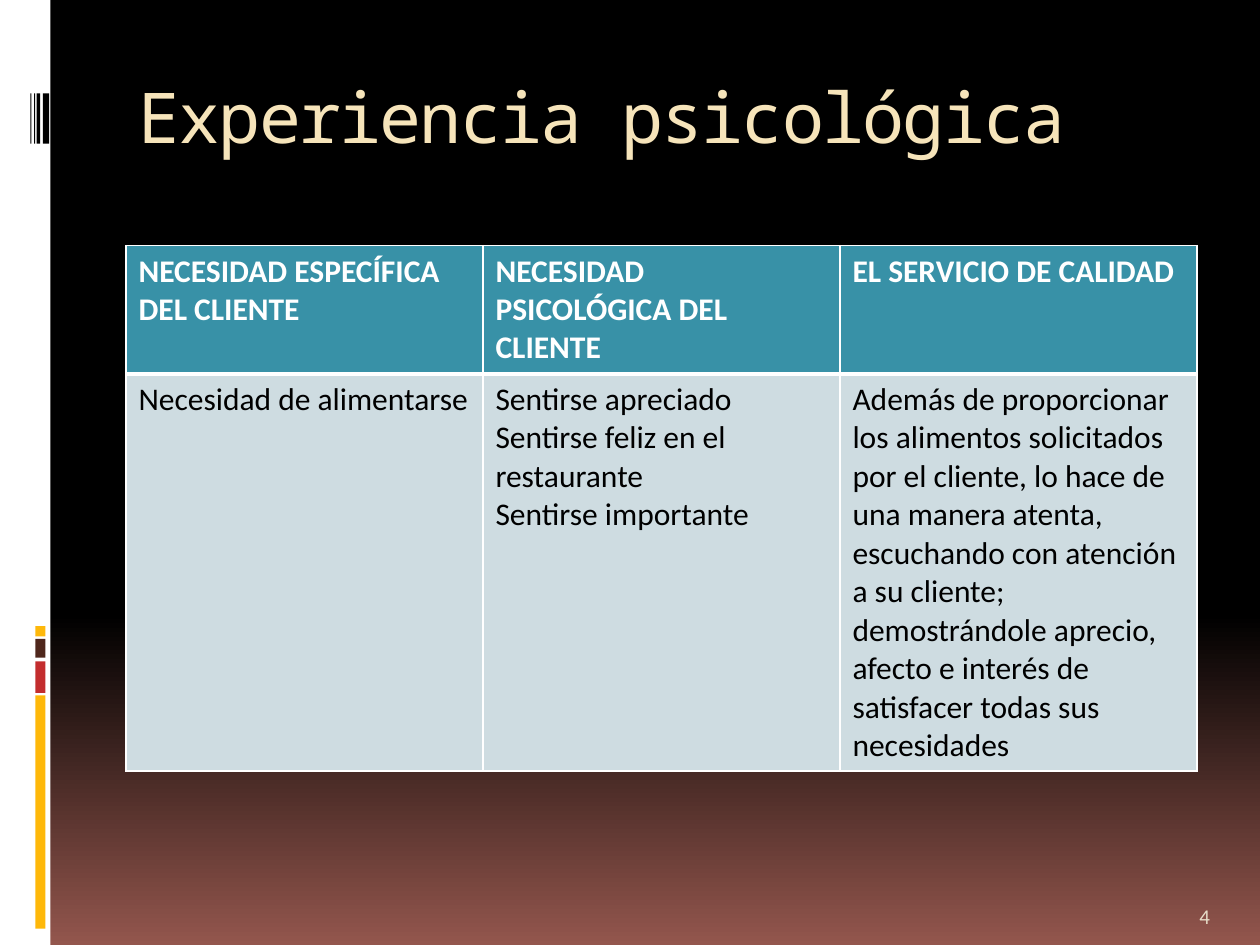
"""Builds the slide on psychological experience in customer service."""
from lxml import etree
from pptx import Presentation, util as u
from pptx.dml.color import RGBColor
from pptx.enum import shapes, text
from pptx.oxml.ns import qn

WHITE = RGBColor(0xFF, 0xFF, 0xFF)
BLACK = RGBColor(0x00, 0x00, 0x00)
ROSE = RGBColor(0x93, 0x56, 0x4D)
GOLD = RGBColor(0xFE, 0xB8, 0x0A)
RED = RGBColor(0xC3, 0x2D, 0x2E)
BROWN = RGBColor(0x4F, 0x27, 0x1C)
CREAM = RGBColor(0xF6, 0xE4, 0xBA)
SAND = RGBColor(0xE7, 0xDE, 0xC9)
TEAL = RGBColor(0x38, 0x91, 0xA7)
PALE = RGBColor(0xCE, 0xDC, 0xE1)

deck = Presentation()
deck.slide_width, deck.slide_height = u.Inches(10), u.Inches(7.5)
slide = deck.slides.add_slide(deck.slide_layouts[6])


def area(x, y, w, h):
    """Turns percent shares of the slide into lengths."""
    wide, high = deck.slide_width / 100, deck.slide_height / 100
    return int(x * wide), int(y * high), int(w * wide), int(h * high)


def style(par, face, size, tint, bold=False):
    """Sets the font of a paragraph."""
    font = par.font
    font.name, font.size, font.bold = face, u.Pt(size), bold
    font.color.rgb = tint


fill = slide.background.fill
fill.gradient()
fill.gradient_angle = 270
for stop, spot, tint in zip(fill.gradient_stops, (0.65, 1), (BLACK, ROSE)):
    stop.position, stop.color.rgb = spot, tint

bars = [(0, 0, 4, 100, WHITE)]
bars += [(2.8, y, 0.8, h, tint) for y, h, tint in (
    (73.6, 24.67, GOLD), (70, 3.33, RED), (67.6, 2, BROWN), (66.27, 1.07, GOLD))]
bars += [(x, 9.87, w, 5.33, BLACK) for x, w in (
    (3.4, 0.5), (2.9, 0.3), (2.7, 0.1), (2.4, 0.1))]
for *box, tint in bars:
    bar = slide.shapes.add_shape(shapes.MSO_SHAPE.RECTANGLE, *area(*box))
    bar.shadow.inherit = False
    bar.fill.solid()
    bar.fill.fore_color.rgb = tint
    bar.line.fill.background()

title = slide.shapes.add_textbox(*area(10, 7.47, 85, 13.33)).text_frame
title.word_wrap = True
title.margin_top = u.Inches(0.02)
title.text = "Experiencia psicológica"
head = title.paragraphs[0]
style(head, "Noto Sans Mono", 40, CREAM)
head.runs[0].font._element.set("spc", "-100")

rows = (
    ("NECESIDAD ESPECÍFICA DEL CLIENTE",
     "NECESIDAD PSICOLÓGICA DEL CLIENTE",
     "EL SERVICIO DE CALIDAD"),
    ("Necesidad de alimentarse",
     "Sentirse apreciado\nSentirse feliz en el restaurante\nSentirse importante",
     "Además de proporcionar los alimentos solicitados por el cliente, "
     "lo hace de una manera atenta, escuchando con atención a su cliente; "
     "demostrándole aprecio, afecto e interés de satisfacer todas sus necesidades"),
)
looks = ((13.6, TEAL, WHITE, True, (1, 1, 1, 3)),
         (42, PALE, BLACK, False, (1, 1, 3, 1)))
grid = slide.shapes.add_table(2, 3, *area(10, 26, 85, 55.6)).table
for r, (row, (high, back, tint, bold, edges)) in enumerate(zip(rows, looks)):
    grid.rows[r].height = area(0, 0, 0, high)[3]
    for c, words in enumerate(row):
        cell = grid.cell(r, c)
        cell.text = words
        for par in cell.text_frame.paragraphs:
            style(par, "Calibri", 18, tint, bold)
        props = cell._tc.get_or_add_tcPr()
        for side, width in zip("LRTB", edges):
            line = etree.SubElement(props, qn(f"a:ln{side}"), w=str(u.Pt(width)))
            solid = etree.SubElement(line, qn("a:solidFill"))
            etree.SubElement(solid, qn("a:srgbClr"), val=str(WHITE))
        cell.fill.solid()
        cell.fill.fore_color.rgb = back

page = slide.shapes.add_textbox(*area(94.2, 93.6, 5, 5.33)).text_frame
page.word_wrap = True
page.vertical_anchor = text.MSO_ANCHOR.BOTTOM
page.text = "4"
style(page.paragraphs[0], "Calibri", 12, SAND)

deck.save("out.pptx")
